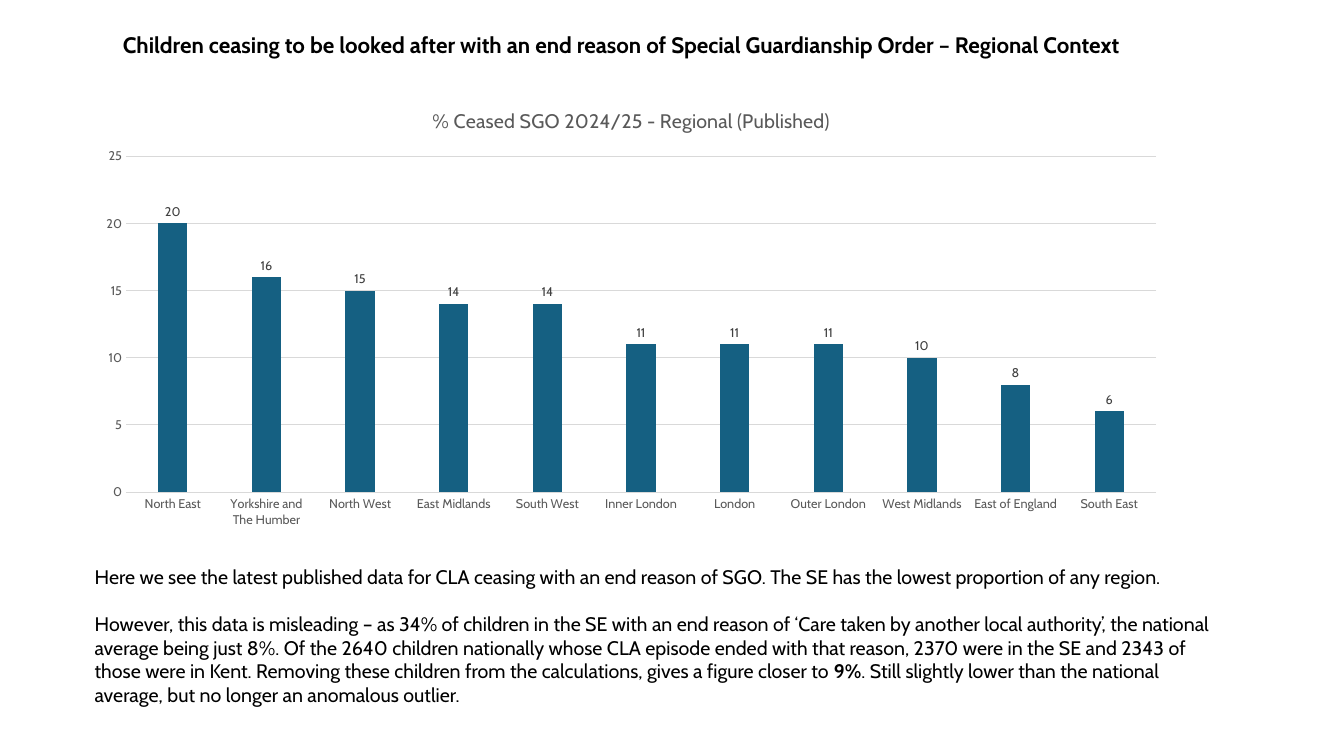
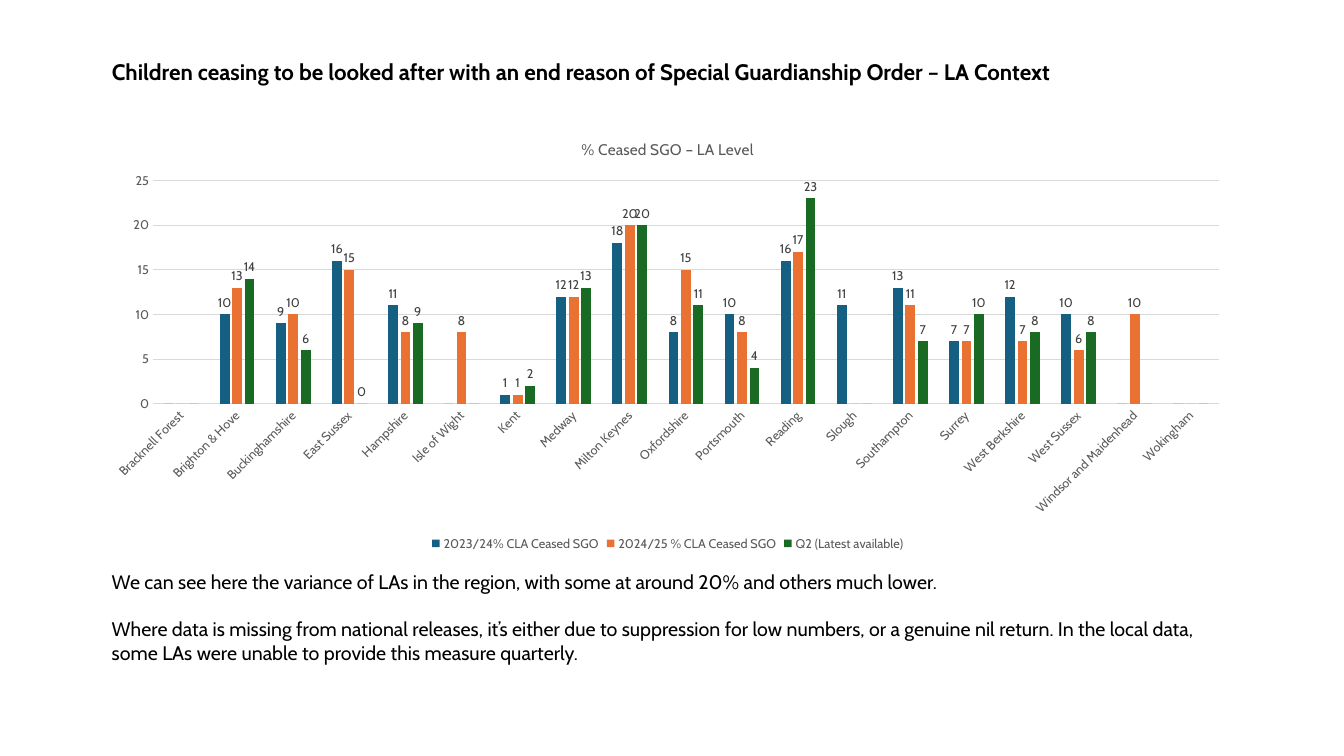
from dataclasses import dataclass

from lxml import etree
from pptx import Presentation
from pptx.chart.data import CategoryChartData
from pptx.dml.color import RGBColor
from pptx.enum.chart import XL_CHART_TYPE, XL_LABEL_POSITION, XL_LEGEND_POSITION, XL_TICK_MARK
from pptx.enum.text import MSO_ANCHOR, MSO_AUTO_SIZE, PP_ALIGN
from pptx.oxml.ns import qn
from pptx.util import Pt

COLUMNS = XL_CHART_TYPE.COLUMN_CLUSTERED
ABOVE_BAR = XL_LABEL_POSITION.OUTSIDE_END
LEGEND_BOTTOM = XL_LEGEND_POSITION.BOTTOM
NO_TICK = XL_TICK_MARK.NONE
TOP = MSO_ANCHOR.TOP
NO_FIT = MSO_AUTO_SIZE.NONE
LEFT = PP_ALIGN.LEFT
TITLE_AND_CONTENT = 1


@dataclass(frozen=True)
class Theme:
    font: str = "Cabin"
    text: str = "000000"
    axis: str = "595959"
    label: str = "404040"
    grid: str = "D9D9D9"
    series: tuple = ("156082", "E97132", "196B24")
    title_size: float = 16
    body_size: float = 14
    chart_size: float = 10
    small_size: float = 9
    grid_width: float = 0.75
    paragraph_gap: float = 17


def set_attributes(target, values):
    for name, value in values.items():
        setattr(target, name, value)


class Deck:
    def __init__(self, theme):
        self.theme = theme
        self.presentation = Presentation()
        set_attributes(self.presentation, {"slide_width": Pt(960), "slide_height": Pt(540)})
        self.slide = None

    def new_slide(self):
        layout = self.presentation.slide_layouts[TITLE_AND_CONTENT]
        self.slide = self.presentation.slides.add_slide(layout)

    def style_font(self, font, size, color, bold=False):
        set_attributes(font, {"name": self.theme.font, "size": Pt(size), "bold": bold})
        font.color.rgb = RGBColor.from_string(color)

    def place(self, shape, box):
        set_attributes(shape, dict(zip(("left", "top", "width", "height"), map(Pt, box))))
        set_attributes(shape.text_frame, {
            "word_wrap": True, "auto_size": NO_FIT, "vertical_anchor": TOP})

    def title(self, text, box):
        shape = self.slide.shapes.title
        self.place(shape, box)
        paragraph = shape.text_frame.paragraphs[0]
        paragraph.alignment = LEFT
        run = paragraph.add_run()
        run.text = text
        self.style_font(run.font, self.theme.title_size, self.theme.text, True)

    def body(self, paragraphs, box):
        shape = self.slide.placeholders[1]
        self.place(shape, box)
        frame = shape.text_frame
        for index, runs in enumerate(paragraphs):
            paragraph = frame.add_paragraph() if index else frame.paragraphs[0]
            set_attributes(paragraph, {
                "alignment": LEFT, "space_after": Pt(0),
                "space_before": Pt(self.theme.paragraph_gap if index else 0)})
            properties = paragraph._p.get_or_add_pPr()
            properties.set("marL", "0")
            properties.set("indent", "0")
            etree.SubElement(properties, qn("a:buNone"))
            for text, bold in runs:
                run = paragraph.add_run()
                run.text = text
                self.style_font(run.font, self.theme.body_size, self.theme.text, bold)

    def column_chart(self, title, title_size, categories, series, box, plot_box,
                     legend=False, label_rotation=0):
        theme = self.theme
        data = CategoryChartData(number_format="0")
        data.categories = categories
        for name, values in series:
            data.add_series(name, [value or 0 for value in values])
        chart = self.slide.shapes.add_chart(COLUMNS, *map(Pt, box), data).chart
        self.style_font(chart.font, theme.chart_size, theme.text)
        set_attributes(chart, {"has_title": True, "has_legend": legend})
        title_run = chart.chart_title.text_frame.paragraphs[0].add_run()
        title_run.text = title
        self.style_font(title_run.font, title_size, theme.axis)
        if legend:
            set_attributes(chart.legend, {
                "position": LEGEND_BOTTOM, "include_in_layout": False})
            self.style_font(chart.legend.font, theme.small_size, theme.axis)
        self.axes(chart, label_rotation)
        self.columns(chart.plots[0], [values for _, values in series])
        self.place_plot(chart, plot_box, box[2:])

    def axes(self, chart, label_rotation):
        theme = self.theme
        category_axis, value_axis = chart.category_axis, chart.value_axis
        for axis in (category_axis, value_axis):
            set_attributes(axis, {"major_tick_mark": NO_TICK, "minor_tick_mark": NO_TICK})
            self.style_font(axis.tick_labels.font, theme.small_size, theme.axis)
        set_attributes(value_axis, {
            "minimum_scale": 0, "maximum_scale": 25, "major_unit": 5,
            "has_major_gridlines": True})
        set_attributes(value_axis.tick_labels, {
            "number_format": "0", "number_format_is_linked": False})
        value_axis.format.line.fill.background()
        for line in (category_axis.format.line, value_axis.major_gridlines.format.line):
            line.width = Pt(theme.grid_width)
            line.color.rgb = RGBColor.from_string(theme.grid)
        if label_rotation:
            text_body = category_axis._element.find(qn("c:txPr")).find(qn("a:bodyPr"))
            text_body.set("rot", str(label_rotation * 60000))
            text_body.set("vert", "horz")

    def columns(self, plot, value_rows):
        set_attributes(plot, {"gap_width": 219, "overlap": -27, "vary_by_categories": False})
        for series, color, values in zip(plot.series, self.theme.series, value_rows):
            series.format.fill.solid()
            series.format.fill.fore_color.rgb = RGBColor.from_string(color)
            labels = series.data_labels
            set_attributes(labels, {
                "show_value": True, "position": ABOVE_BAR,
                "number_format": "0", "number_format_is_linked": False})
            self.style_font(labels.font, self.theme.small_size, self.theme.label)
            missing = [index for index, value in enumerate(values) if value is None]
            for position, index in enumerate(missing):
                label = etree.Element(qn("c:dLbl"))
                etree.SubElement(label, qn("c:idx")).set("val", str(index))
                etree.SubElement(label, qn("c:delete")).set("val", "1")
                labels._element.insert(position, label)

    def place_plot(self, chart, plot_box, chart_size):
        area = chart._chartSpace.chart.plotArea
        layout = area.find(qn("c:layout"))
        if layout is None:
            layout = etree.Element(qn("c:layout"))
            area.insert(0, layout)
        manual = etree.SubElement(layout, qn("c:manualLayout"))
        settings = {"layoutTarget": "inner", "xMode": "edge", "yMode": "edge"}
        for name, length, whole in zip("xywh", plot_box, chart_size * 2):
            settings[name] = length / whole
        for name, value in settings.items():
            etree.SubElement(manual, qn(f"c:{name}")).set("val", str(value))


REGIONS = {
    "North East": 20, "Yorkshire and The Humber": 16, "North West": 15,
    "East Midlands": 14, "South West": 14, "Inner London": 11, "London": 11,
    "Outer London": 11, "West Midlands": 10, "East of England": 8, "South East": 6,
}

AUTHORITIES = {
    "Bracknell Forest": (None, None, None),
    "Brighton & Hove": (10, 13, 14),
    "Buckinghamshire": (9, 10, 6),
    "East Sussex": (16, 15, 0),
    "Hampshire": (11, 8, 9),
    "Isle of Wight": (None, 8, None),
    "Kent": (1, 1, 2),
    "Medway": (12, 12, 13),
    "Milton Keynes": (18, 20, 20),
    "Oxfordshire": (8, 15, 11),
    "Portsmouth": (10, 8, 4),
    "Reading": (16, 17, 23),
    "Slough": (11, None, None),
    "Southampton": (13, 11, 7),
    "Surrey": (7, 7, 10),
    "West Berkshire": (12, 7, 8),
    "West Sussex": (10, 6, 8),
    "Windsor and Maidenhead": (None, 10, None),
    "Wokingham": (None, None, None),
}
PERIODS = ("2023/24% CLA Ceased SGO", "2024/25 % CLA Ceased SGO", "Q2 (Latest available)")
HEADING = "Children ceasing to be looked after with an end reason of Special Guardianship Order – "


def regional_slide(deck):
    deck.new_slide()
    deck.title(HEADING + "Regional Context", (80.6, 18.7, 774, 26.6))
    deck.column_chart(
        "% Ceased SGO 2024/25 - Regional (Published)", 14, list(REGIONS),
        [("Series 1", list(REGIONS.values()))],
        (60.5, 64, 781, 320), (29.5, 47.6, 735.8, 240))
    deck.body([
        [("Here we see the latest published data for CLA ceasing with an end reason of SGO. "
          "The SE has the lowest proportion of any region.", False)],
        [("However, this data is misleading – as 34% of children in the SE with an end reason "
          "of ‘Care taken by another local authority’, the national average being just 8%. "
          "Of the 2640 children nationally whose CLA episode ended with that reason, 2370 were "
          "in the SE and 2343 of those were in Kent. Removing these children from the "
          "calculations, gives a figure closer to ", False),
         ("9%", True),
         (". Still slightly lower than the national average, but no longer an anomalous "
          "outlier.", False)],
    ], (60.4, 399.8, 814.3, 126.5))


def authority_slide(deck):
    deck.new_slide()
    deck.title(HEADING + "LA Context", (72.7, 38.2, 774, 26.6))
    deck.column_chart(
        "% Ceased SGO – LA Level", 11, list(AUTHORITIES),
        list(zip(PERIODS, zip(*AUTHORITIES.values()))),
        (66.2, 87, 821.5, 309.6), (43.1, 41.9, 761.4, 159.6),
        legend=True, label_rotation=-45)
    deck.body([
        [("We can see here the variance of LAs in the region, with some at around 20% and "
          "others much lower.", False)],
        [("Where data is missing from national releases, it’s either due to suppression for "
          "low numbers, or a genuine nil return. In the local data, some LAs were unable to "
          "provide this measure quarterly.", False)],
    ], (72.6, 403.3, 814.3, 75))


def main():
    deck = Deck(Theme())
    regional_slide(deck)
    authority_slide(deck)
    deck.presentation.save("out.pptx")


if __name__ == "__main__":
    main()
